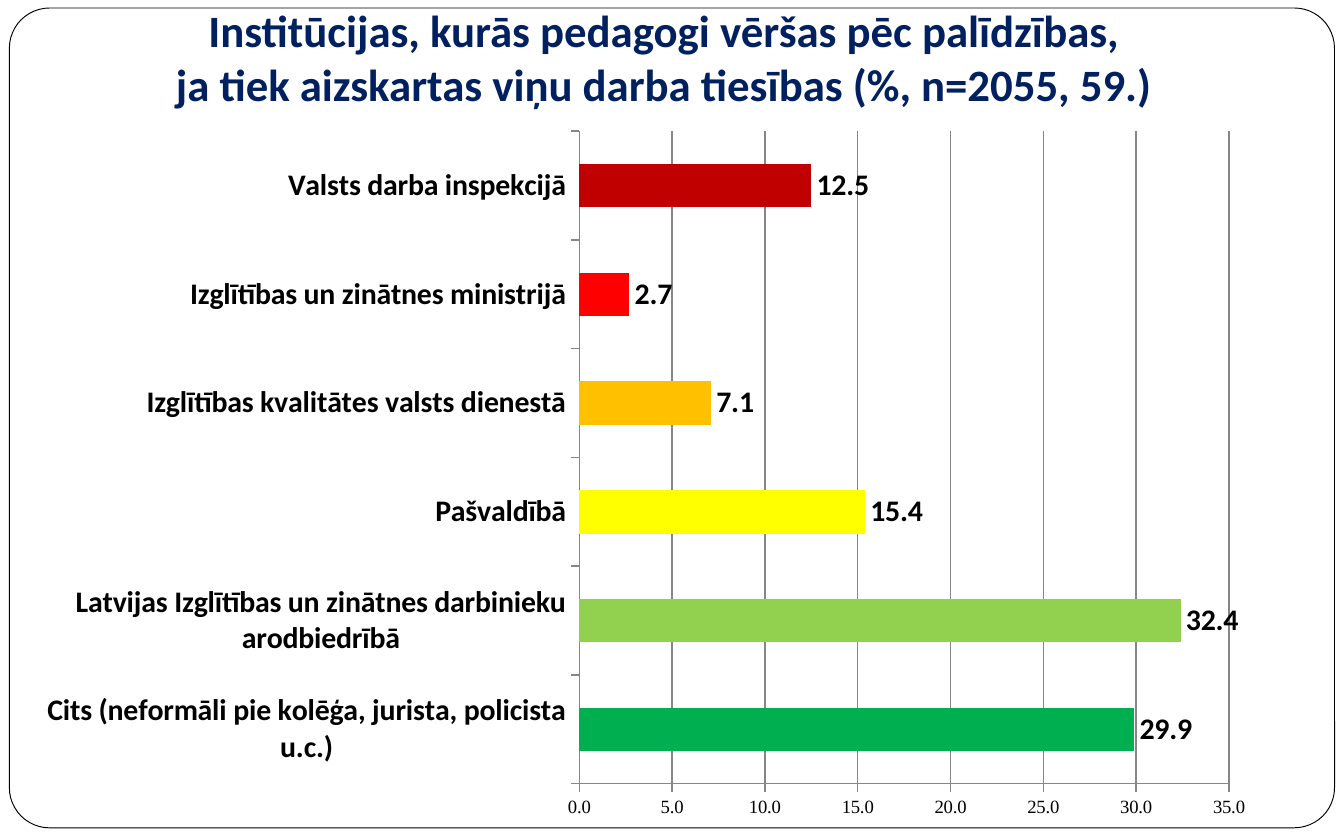
from lxml.etree import SubElement
from pptx import Presentation
from pptx.chart.data import CategoryChartData
from pptx.dml.color import RGBColor
from pptx.enum.chart import XL_CHART_TYPE as ChartType, XL_LABEL_POSITION as LabelPosition
from pptx.enum.chart import XL_TICK_MARK as TickMark
from pptx.enum.shapes import MSO_SHAPE as Shape
from pptx.enum.text import MSO_ANCHOR as Anchor, PP_ALIGN as Align
from pptx.oxml.ns import qn
from pptx.util import Inches, Pt

COLORS = {"white": "FFFFFF", "black": "000000", "title": "002060", "grid": "868686"}
TITLE = ("Institūcijas, kurās pedagogi vēršas pēc palīdzības,",
         "ja tiek aizskartas viņu darba tiesības (%, n=2055, 59.)")
# Institution, share in %, bar colour; from the bottom bar up
ANSWERS = [
    ("Cits (neformāli pie kolēģa, jurista, policista u.c.)", 29.9, "00B050"),
    ("Latvijas Izglītības un zinātnes darbinieku arodbiedrībā", 32.4, "92D050"),
    ("Pašvaldībā", 15.4, "FFFF00"),
    ("Izglītības kvalitātes valsts dienestā", 7.1, "FFC000"),
    ("Izglītības un zinātnes ministrijā", 2.7, "FF0000"),
    ("Valsts darba inspekcijā", 12.5, "C00000"),
]
PLOT_AREA = {"x": 0.434, "y": 0.005, "w": 0.503, "h": 0.934}


def color(name):
    return RGBColor.from_string(COLORS[name])


def set_font(font, size, name="Calibri", bold=True, tone="black"):
    font.name, font.size, font.bold = name, Pt(size), bold
    font.color.rgb = color(tone)


def set_plot_area(chart):
    """Fix the inner plot area as fractions of the chart."""
    plot_area = chart._chartSpace.chart.plotArea
    layout = plot_area.find(qn("c:layout"))
    if layout is None:
        layout = SubElement(plot_area, qn("c:layout"))
        plot_area.insert(0, layout)
    manual = SubElement(layout, qn("c:manualLayout"))
    settings = {"layoutTarget": "inner", "xMode": "edge", "yMode": "edge", **PLOT_AREA}
    for tag, value in settings.items():
        SubElement(manual, qn(f"c:{tag}")).set("val", str(value))


deck = Presentation()
deck.slide_width, deck.slide_height = Inches(10), Inches(6.25)
page = deck.slides.add_slide(deck.slide_layouts[6])

# Rounded frame
frame = page.shapes.add_shape(Shape.ROUNDED_RECTANGLE, Inches(0.07), Inches(0.06),
                              Inches(9.86), Inches(6.1))
frame.adjustments[0] = 0.049
frame.shadow.inherit = False
frame.fill.solid()
frame.fill.fore_color.rgb = color("white")
frame.line.color.rgb = color("black")
frame.line.width = Pt(0.5)

# Title
box = page.shapes.add_textbox(Inches(-0.12), Inches(0.13), Inches(10.12), Inches(0.79))
text = box.text_frame
text.word_wrap = True
text.vertical_anchor = Anchor.BOTTOM
text.margin_bottom = Inches(0.1)
para = text.paragraphs[0]
para.text = "\v".join(TITLE)
para.alignment = Align.CENTER
set_font(para.font, 24, tone="title")

# Bar chart
names, shares, bar_colors = zip(*ANSWERS)
chart_data = CategoryChartData(number_format="0.0")
chart_data.categories = names
chart_data.add_series("Series 1", shares)
chart = page.shapes.add_chart(ChartType.BAR_CLUSTERED, Inches(0.14), Inches(0.95),
                              Inches(9.61), Inches(5.2), chart_data).chart
chart.has_legend = chart.has_title = False
set_font(chart.font, 10, "Times New Roman", bold=False)
set_plot_area(chart)

plot = chart.plots[0]
plot.gap_width = 150
plot.vary_by_categories = False
series = plot.series[0]
for index, bar_color in enumerate(bar_colors):
    fill = series.points[index].format.fill
    fill.solid()
    fill.fore_color.rgb = RGBColor.from_string(bar_color)

labels = series.data_labels
labels.show_value = True
labels.position = LabelPosition.OUTSIDE_END
labels.number_format, labels.number_format_is_linked = "0.0", False
set_font(labels.font, 16)

# Axes
share_axis = chart.value_axis
share_axis.minimum_scale, share_axis.maximum_scale, share_axis.major_unit = 0, 35, 5
share_axis.tick_labels.number_format = "0.0"
share_axis.tick_labels.number_format_is_linked = False
share_axis.has_major_gridlines = True
set_font(chart.category_axis.tick_labels.font, 16)
for axis in (chart.category_axis, share_axis):
    axis.major_tick_mark = TickMark.OUTSIDE
    axis.format.line.color.rgb = color("grid")
share_axis.major_gridlines.format.line.color.rgb = color("grid")

deck.save("out.pptx")
